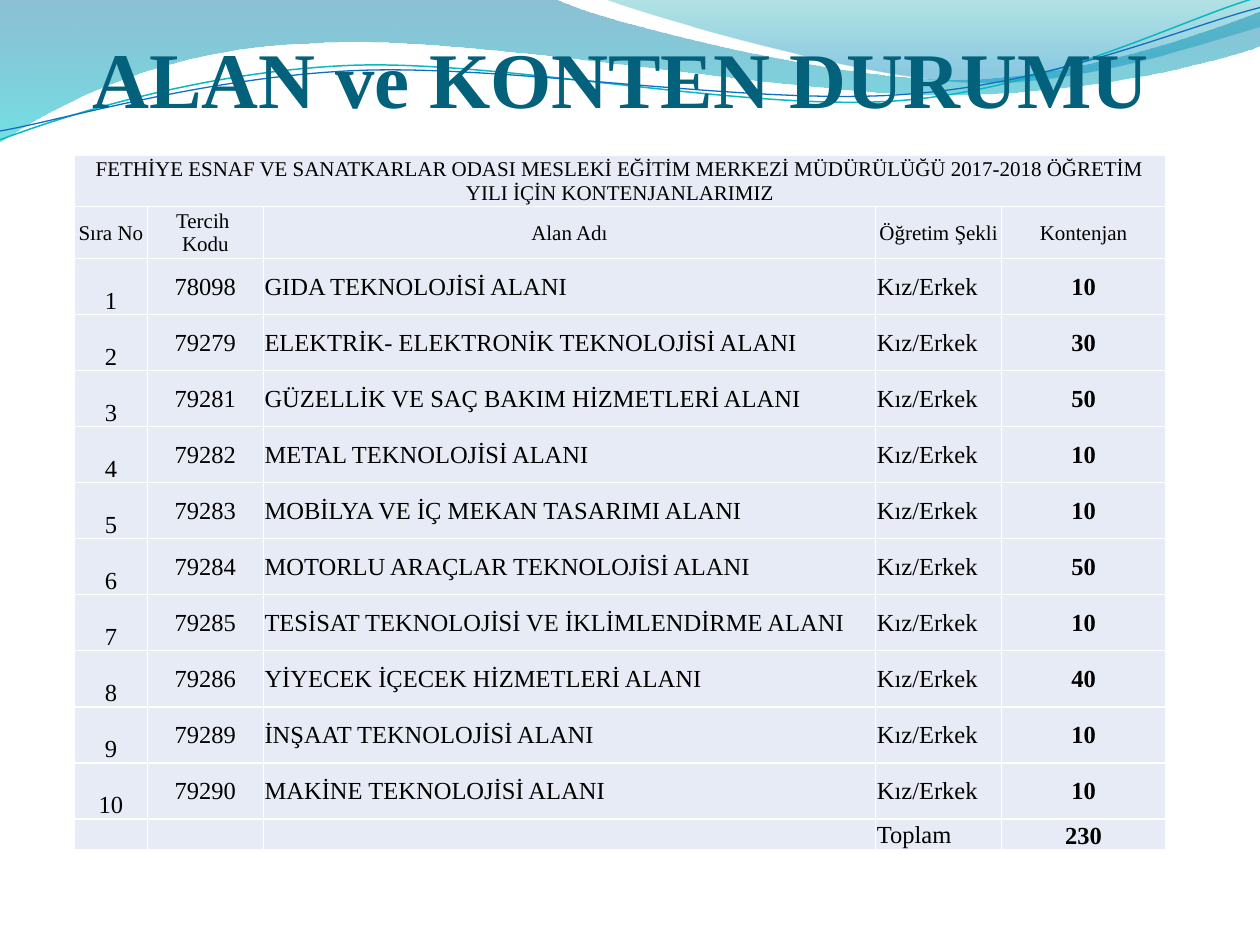
from copy import deepcopy

from lxml import etree
from pptx import Presentation
from pptx import util as u
from pptx.dml.color import RGBColor
from pptx.enum import text
from pptx.oxml import ns

SLIDE_W, SLIDE_H = u.Inches(10), u.Inches(7.5)
GRID = SLIDE_W / 10
FONT = "Times New Roman"

TITLE_TEAL = RGBColor(0x04, 0x61, 0x7B)
BLACK = RGBColor(0x00, 0x00, 0x00)
CELL_FILL = RGBColor(0xE7, 0xEB, 0xF5)
BORDER = RGBColor(0xFF, 0xFF, 0xFF)
WAVE_BLUE = RGBColor(0x00, 0x74, 0xA1)
WAVE_CYAN = RGBColor(0x00, 0xC6, 0xCF)
CREST_TEAL = RGBColor(0x00, 0xA1, 0xA9)
CREST_BLUE = RGBColor(0x00, 0x8B, 0xBF)
LINE_TEAL = RGBColor(0x0A, 0xB8, 0xBF)
LINE_BLUE = RGBColor(0x0F, 0x6F, 0xC6)

# Outlines in grid units: a start point, then lines (1 point) and curves (3 points)
WAVE = [(0, 0), [(4.4, -0.01)],
        [(4.76, 0.17), (6.64, 0.63), (7.58, 0.63)],
        [(8.53, 0.63), (9.58, 0.26), (10, 0.09)], [(10.01, 0.36)],
        [(9.83, 0.44), (8.7, 0.76), (7.46, 0.75)],
        [(6.22, 0.75), (3.82, 0.28), (2.57, 0.34)],
        [(1.29, 0.36), (0.46, 0.83), (-0.01, 1.13)], [(0, 0)]]
CREST = [(4.79, -0.01),
         [(5.09, 0.11), (6.82, 0.62), (7.69, 0.65)],
         [(8.56, 0.69), (9.61, 0.32), (10, 0.21)], [(10, 0)], [(4.79, -0.01)]]
TEAL_STRAND = [(0, 1.11),
               [(0.48, 0.93), (1.58, 0.57), (2.77, 0.52)],
               [(3.95, 0.47), (5.93, 0.89), (7.13, 0.8)],
               [(8.33, 0.71), (9.38, 0.15), (9.98, -0.02)]]
BLUE_STRAND = [(0, 1.04),
               [(0.47, 0.96), (1.64, 0.61), (2.83, 0.56)],
               [(4.03, 0.51), (5.97, 0.84), (7.17, 0.75)],
               [(8.36, 0.67), (9.41, 0.21), (10, 0.06)]]

HEADING = ("FETHİYE ESNAF VE SANATKARLAR ODASI MESLEKİ EĞİTİM MERKEZİ MÜDÜRÜLÜĞÜ "
           "2017-2018 ÖĞRETİM YILI İÇİN KONTENJANLARIMIZ")
COLUMN_NAMES = ["Sıra No", "Tercih \vKodu", "Alan Adı", "Öğretim Şekli", "Kontenjan"]
FIELDS = [
    (78098, "GIDA TEKNOLOJİSİ ALANI", 10),
    (79279, "ELEKTRİK- ELEKTRONİK TEKNOLOJİSİ ALANI", 30),
    (79281, "GÜZELLİK VE SAÇ BAKIM HİZMETLERİ ALANI", 50),
    (79282, "METAL TEKNOLOJİSİ ALANI", 10),
    (79283, "MOBİLYA VE İÇ MEKAN TASARIMI ALANI", 10),
    (79284, "MOTORLU ARAÇLAR TEKNOLOJİSİ ALANI", 50),
    (79285, "TESİSAT TEKNOLOJİSİ VE İKLİMLENDİRME ALANI", 10),
    (79286, "YİYECEK İÇECEK HİZMETLERİ ALANI", 40),
    (79289, "İNŞAAT TEKNOLOJİSİ ALANI", 10),
    (79290, "MAKİNE TEKNOLOJİSİ ALANI", 10),
]
COLUMN_WIDTHS = [0.58, 0.92, 4.86, 1, 1.3]
HEAD_ROW, TOTAL_ROW = 0.3, 0.23
FIELD_ROW = 4.45 / len(FIELDS)


def add_outline(slide, outline, close):
    """Freeform whose three-point segments are cubic curves."""
    start, *segments = outline
    points = [(x * GRID, y * GRID) for x, y in [start] + sum(segments, [])]
    builder = slide.shapes.build_freeform(*points[0])
    builder.add_line_segments(points[1:], close=close)
    shape = builder.convert_to_shape()
    shape.shadow.inherit = False
    steps = iter(list(shape._element.iter(ns.qn("a:lnTo"))))
    for segment in segments:
        legs = [next(steps) for _ in segment]
        if len(legs) == 3:
            curve = etree.Element(ns.qn("a:cubicBezTo"))
            legs[0].addprevious(curve)
            for leg in legs:
                curve.append(leg[0])
                leg.getparent().remove(leg)
    return shape


def add_wave(slide, outline, stops):
    """Filled band; stops are (position, colour, opacity in percent), top to bottom."""
    wave = add_outline(slide, outline, close=True)
    wave.line.fill.background()
    wave.fill.gradient()
    wave.fill.gradient_angle = 270
    for stop, (position, color, opacity) in zip(wave.fill.gradient_stops, stops):
        stop.position = position
        stop.color.rgb = color
        color_tag = stop._gs.find(ns.qn("a:srgbClr"))
        etree.SubElement(color_tag, ns.qn("a:alpha"), val=str(opacity * 1000))


def add_strand(slide, outline, color, width):
    strand = add_outline(slide, outline, close=False)
    strand.fill.background()
    strand.line.color.rgb = color
    strand.line.width = u.Pt(width)


def style_paragraph(paragraph, size, color, bold, align):
    """Style the paragraph, its runs, breaks and end mark, which all set row heights."""
    paragraph.alignment = align
    for part in (paragraph, *paragraph.runs):
        font = part.font
        font.name, font.size, font.bold = FONT, u.Pt(size), bold
        font.color.rgb = color
    for line_break in paragraph._p.findall(ns.qn("a:br")):
        line_break.insert(0, deepcopy(paragraph.runs[0]._r.rPr))
    end_mark = paragraph._p.get_or_add_endParaRPr()
    end_mark.set("sz", str(size * 100))
    etree.SubElement(end_mark, ns.qn("a:latin"), typeface=FONT)


def add_title(slide):
    box = slide.shapes.add_textbox(int(SLIDE_W * 0.035), int(SLIDE_H * 0.44 / 7.5),
                                   int(SLIDE_W * 0.915), int(SLIDE_H * 0.55 / 7.5))
    frame = box.text_frame
    frame.word_wrap = True
    frame.vertical_anchor = text.MSO_ANCHOR.BOTTOM
    frame.margin_left = frame.margin_right = frame.margin_bottom = 0
    frame.text = "ALAN ve KONTEN DURUMU"
    style_paragraph(frame.paragraphs[0], 45, TITLE_TEAL, True, text.PP_ALIGN.CENTER)


def set_borders(cell):
    properties = cell._tc.get_or_add_tcPr()
    for index, side in enumerate(("lnL", "lnR", "lnT", "lnB")):
        line = etree.Element(ns.qn(f"a:{side}"), w=str(u.Pt(1)))
        fill = etree.SubElement(line, ns.qn("a:solidFill"))
        etree.SubElement(fill, ns.qn("a:srgbClr"), val=str(BORDER))
        properties.insert(index, line)


def fill_cell(cell, words, size=14, bold=False, align=text.PP_ALIGN.CENTER,
              anchor=text.MSO_ANCHOR.MIDDLE):
    cell.margin_left = cell.margin_right = cell.margin_top = u.Inches(0.01)
    cell.margin_bottom = 0
    cell.vertical_anchor = anchor
    cell.fill.solid()
    cell.fill.fore_color.rgb = CELL_FILL
    set_borders(cell)
    cell.text = str(words)
    style_paragraph(cell.text_frame.paragraphs[0], size, BLACK, bold, align)


def add_quota_table(slide):
    heights = [HEAD_ROW] * 2 + [FIELD_ROW] * len(FIELDS) + [TOTAL_ROW]
    frame = slide.shapes.add_table(
        len(heights), len(COLUMN_WIDTHS), int(SLIDE_W * 0.059), int(SLIDE_H * 0.164),
        int(sum(COLUMN_WIDTHS) * GRID), int(sum(heights) * GRID))
    table = frame.table
    table.first_row = table.horz_banding = False
    for column, width in zip(table.columns, COLUMN_WIDTHS):
        column.width = int(width * GRID)
    for row, height in zip(table.rows, heights):
        row.height = int(height * GRID)
    frame.height = int(5.52 * GRID)

    head = [[HEADING, "", "", "", ""], COLUMN_NAMES]
    for row, labels in enumerate(head):
        for column, label in enumerate(labels):
            fill_cell(table.cell(row, column), label, size=12)
    table.cell(0, 0).merge(table.cell(0, len(COLUMN_WIDTHS) - 1))

    body = [(number, code, field, "Kız/Erkek", quota)
            for number, (code, field, quota) in enumerate(FIELDS, 1)]
    body.append(("", "", "", "Toplam", sum(quota for _, _, quota in FIELDS)))
    bottom, left = text.MSO_ANCHOR.BOTTOM, text.PP_ALIGN.LEFT
    column_styles = [{"anchor": bottom}, {}, {"align": left}, {"align": left}, {"bold": True}]
    for row, values in enumerate(body, len(head)):
        for column, (value, style) in enumerate(zip(values, column_styles)):
            fill_cell(table.cell(row, column), value, **style)
    table.cell(len(heights) - 1, 4).vertical_anchor = bottom


def main():
    deck = Presentation()
    deck.slide_width, deck.slide_height = SLIDE_W, SLIDE_H
    slide = deck.slides.add_slide(deck.slide_layouts[6])
    add_wave(slide, WAVE, [(0, WAVE_BLUE, 45), (1, WAVE_CYAN, 55)])
    add_wave(slide, CREST, [(0, CREST_TEAL, 30), (0.8, CREST_BLUE, 45)])
    add_strand(slide, TEAL_STRAND, LINE_TEAL, 0.85)
    add_strand(slide, BLUE_STRAND, LINE_BLUE, 0.75)
    add_title(slide)
    add_quota_table(slide)
    deck.save("out.pptx")


if __name__ == "__main__":
    main()
